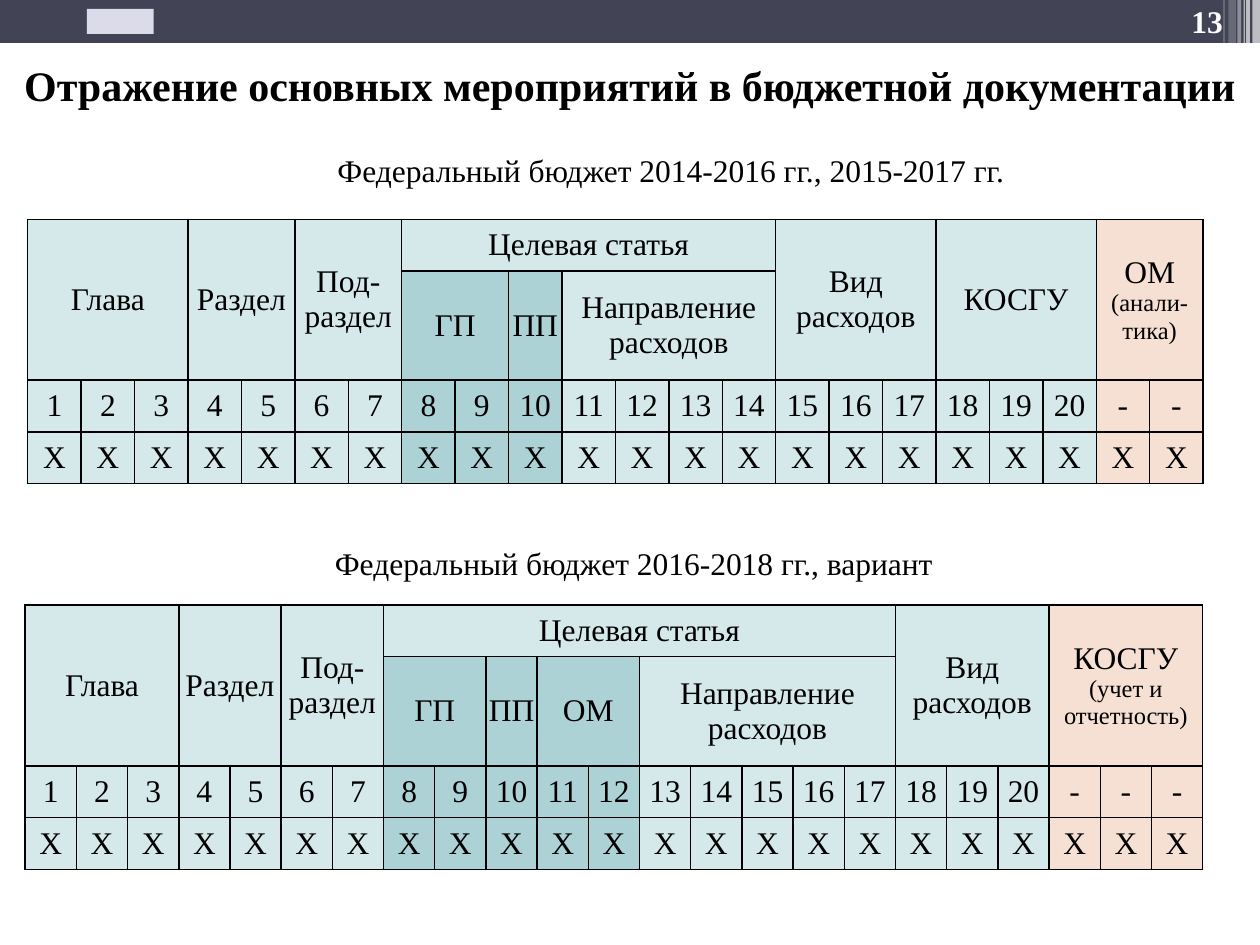
from itertools import chain, repeat

from lxml import etree
from pptx import Presentation
from pptx.dml.color import RGBColor
from pptx.enum.shapes import MSO_SHAPE
from pptx.enum.text import MSO_ANCHOR, PP_ALIGN
from pptx.oxml.ns import qn
from pptx.util import Inches, Pt

RECTANGLE = MSO_SHAPE.RECTANGLE
MIDDLE = MSO_ANCHOR.MIDDLE
CENTER = PP_ALIGN.CENTER
LEFT = PP_ALIGN.LEFT

THEME = {
    "font": "Times New Roman",
    "band": "424456", "white": "FFFFFF", "black": "000000", "emblem": "DBDBE9",
    "pale": "D6E9EA", "teal": "ADD2D6", "peach": "F5E0D3",
    "title": 24, "body": 18, "note": 14,
}
TITLE_ONLY = 5
ROW = 0.41
LAST_CODE = 20


def add_span(para, text, size="body", color="black", bold=False):
    span = para.add_run()
    span.text = text
    formats = {"name": THEME["font"], "size": Pt(THEME[size]), "bold": bold}
    for name, value in formats.items():
        setattr(span.font, name, value)
    span.font.color.rgb = RGBColor.from_string(THEME[color])


def style_cell(cell, tone):
    """Give a cell its insets, thin black borders and fill."""
    formats = {"margin_left": 0, "margin_right": 0, "vertical_anchor": MIDDLE}
    for name, value in formats.items():
        setattr(cell, name, value)
    properties = cell._tc.get_or_add_tcPr()
    for side in ("lnL", "lnR", "lnT", "lnB"):
        line = etree.SubElement(properties, qn(f"a:{side}"), w=str(Pt(1)))
        paint = etree.SubElement(line, qn("a:solidFill"))
        etree.SubElement(paint, qn("a:srgbClr"), val=THEME["black"])
    cell.fill.solid()
    cell.fill.fore_color.rgb = RGBColor.from_string(THEME[tone])
    cell.text_frame.paragraphs[0].alignment = CENTER


deck = Presentation()
deck.slide_width, deck.slide_height = Inches(10), Inches(7.5)
page = deck.slides.add_slide(deck.slide_layouts[TITLE_ONLY])

# Title
title = page.shapes.title
place = {"left": 0, "top": 0.22, "width": 10, "height": 0.9}
for name, value in place.items():
    setattr(title, name, Inches(value))
title.text_frame.vertical_anchor = MIDDLE
title_para = title.text_frame.paragraphs[0]
title_para.alignment = CENTER
add_span(title_para, "Отражение основных мероприятий в бюджетной документации",
         "title", bold=True)

# Top band, plain emblem block and translucent stripes: left, top, width, height, colour, opacity %
bars = [
    (0, 0, 10, 0.34, "band", 100),
    (0.69, 0.07, 0.53, 0.2, "emblem", 100),
    (9.94, 0, 0.06, 0.68, "white", 65),
    (9.89, 0, 0.03, 0.68, "white", 65),
    (9.87, 0, 0.01, 0.68, "white", 60),
    (9.82, 0, 0.03, 0.68, "white", 40),
    (9.75, 0, 0.06, 0.64, "white", 20),
    (9.71, 0, 0.01, 0.64, "white", 30),
]
for *place, color, opacity in bars:
    bar = page.shapes.add_shape(RECTANGLE, *map(Inches, place))
    bar.shadow.inherit = False
    bar.line.fill.background()
    bar.fill.solid()
    bar.fill.fore_color.rgb = RGBColor.from_string(THEME[color])
    if opacity < 100:
        paint = bar._element.spPr.find(f".//{qn('a:srgbClr')}")
        etree.SubElement(paint, qn("a:alpha"), val=str(opacity * 1000))

# Page number and table captions: place, text, colour, bold, alignment, wrap, side inset, top inset
labels = [
    ((9.34, 0.02, 0.48, 0.3), "13", "white", True, CENTER, True, 0, 0),
    ((2.58, 1.15, 5.51, 0.4), "Федеральный бюджет 2014-2016 гг., 2015-2017 гг.",
     "black", False, LEFT, False, 0.1, 0.05),
    ((2.56, 4.27, 5, 0.4), "Федеральный бюджет 2016-2018 гг., вариант",
     "black", False, LEFT, False, 0.1, 0.05),
]
for place, text, color, bold, alignment, wrap, side, top in labels:
    frame = page.shapes.add_textbox(*map(Inches, place)).text_frame
    formats = {"word_wrap": wrap, "margin_left": Inches(side), "margin_right": Inches(side),
               "margin_top": Inches(top), "margin_bottom": Inches(top)}
    for name, value in formats.items():
        setattr(frame, name, value)
    frame.paragraphs[0].alignment = alignment
    add_span(frame.paragraphs[0], text, color=color, bold=bold)

# Header groups: text, note, columns, tone; "parts" split a group on the second row
common = [("Глава", "", 3, "pale"), ("Раздел", "", 2, "pale"), ("Под-раздел", "", 2, "pale")]
programme = [("ГП", "", 2, "teal"), ("ПП", "", 1, "teal")]
expense = ("Вид расходов", "", 3, "pale")
budgets = [
    {"place": (0.22, 1.74, 9.33), "second_row": 0.8,
     "parts": programme + [("Направление расходов", "", 4, "pale")],
     "after": [expense, ("КОСГУ", "", 3, "pale"), ("ОМ ", "(анали-тика)", 2, "peach")]},
    {"place": (0.2, 4.8, 9.35), "second_row": 0.87,
     "parts": programme + [("ОМ", "", 2, "teal"), ("Направление расходов", "", 5, "pale")],
     "after": [expense, ("КОСГУ ", "(учет и отчетность)", 3, "peach")]},
]
for budget in budgets:
    parts = budget["parts"]
    target = ("Целевая статья", "", sum(part[2] for part in parts), "pale")
    top_groups = common + [target] + budget["after"]
    tones = [tone for _, _, columns, tone in common + parts + budget["after"]
             for _ in range(columns)]
    left, top, width = budget["place"]
    heights = [ROW, budget["second_row"], ROW, ROW]
    table = page.shapes.add_table(len(heights), len(tones), *map(
        Inches, (left, top, width, sum(heights)))).table
    table.first_row = table.horz_banding = False
    for row, height in zip(table.rows, heights):
        row.height = Inches(height)
    for column in table.columns:
        column.width = Inches(width / len(tones))

    for row in range(len(heights)):
        for column, tone in enumerate(tones):
            in_target = row == 0 and tone == "teal"
            style_cell(table.cell(row, column), "pale" if in_target else tone)

    target_start = sum(group[2] for group in common)
    for row, start, groups in ((0, 0, top_groups), (1, target_start, parts)):
        for group in groups:
            text, note, columns, _ = group
            cell = table.cell(row, start)
            last_row = row if group is target else 1
            if columns > 1 or last_row > row:
                cell.merge(table.cell(last_row, start + columns - 1))
            para = cell.text_frame.paragraphs[0]
            add_span(para, text)
            if note:
                add_span(para, note, "note")
            start += columns

    codes = chain(range(1, LAST_CODE + 1), repeat("-"))
    for column, code in zip(range(len(tones)), codes):
        for row, text in ((2, str(code)), (3, "Х")):
            add_span(table.cell(row, column).text_frame.paragraphs[0], text)

deck.save("out.pptx")
